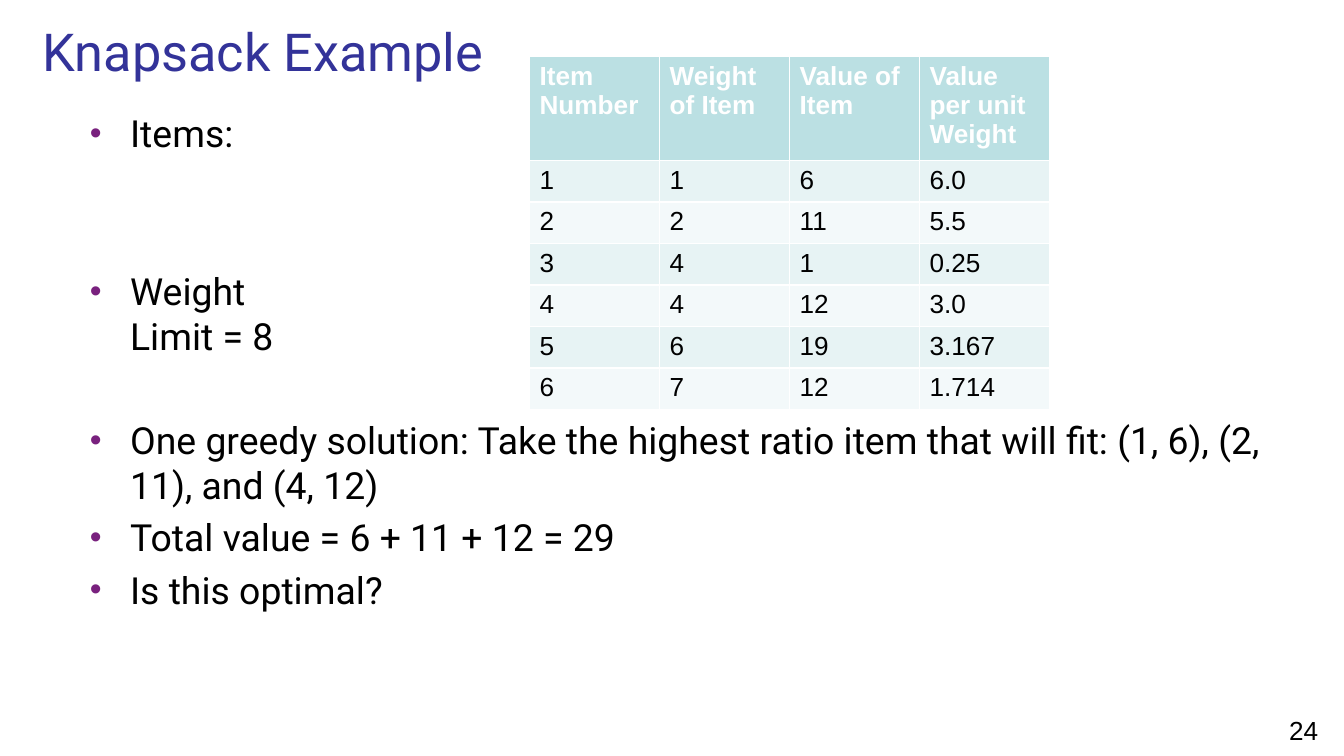
from dataclasses import dataclass

from lxml.etree import SubElement
from pptx import Presentation
from pptx.dml.color import RGBColor
from pptx.enum.text import MSO_ANCHOR, PP_ALIGN
from pptx.oxml.ns import qn
from pptx.util import Inches, Pt


@dataclass(frozen=True)
class Theme:
    heading_font: str = "Roboto"
    table_font: str = "Arial"
    title_size: float = 28
    body_size: float = 20
    small_size: float = 14
    title: str = "333399"
    text: str = "000000"
    bullet: str = "79217E"
    light: str = "FFFFFF"
    header: str = "BBE0E3"
    bands: tuple = ("E7F3F4", "F3F9FA")


@dataclass(frozen=True)
class Box:
    left: int
    top: int
    width: int
    height: int

    def bounds(self):
        return self.left, self.top, self.width, self.height


THEME = Theme()
SLIDE_WIDTH = Inches(10)
SLIDE_HEIGHT = SLIDE_WIDTH * 9 // 16
GRID_UNIT = SLIDE_WIDTH / 100
TIGHT, AFTER_ITEMS, AFTER_LIMIT = 4, 60.6, 32

POINTS = [
    ("Items:", TIGHT),
    ("Weight\nLimit = 8", AFTER_ITEMS),
    ("One greedy solution: Take the highest ratio item that will fit: "
     "(1, 6), (2, 11), and (4, 12)", AFTER_LIMIT),
    ("Total value = 6 + 11 + 12 = 29", TIGHT),
    ("Is this optimal?", TIGHT),
]
HEADINGS = ("Item Number", "Weight of Item", "Value of Item", "Value per unit Weight")
ITEMS = [
    ("1", "1", "6", "6.0"),
    ("2", "2", "11", "5.5"),
    ("3", "4", "1", "0.25"),
    ("4", "4", "12", "3.0"),
    ("5", "6", "19", "3.167"),
    ("6", "7", "12", "1.714"),
]


def grid_box(column, row, columns, rows):
    return Box(*(round(cells * GRID_UNIT) for cells in (column, row, columns, rows)))


def style(paragraph, font_name, size, color, bold=False):
    font = paragraph.font
    font.name, font.size, font.bold = font_name, Pt(size), bold
    font.color.rgb = RGBColor.from_string(color)


def add_frame(slide, box, anchor=MSO_ANCHOR.TOP):
    frame = slide.shapes.add_textbox(*box.bounds()).text_frame
    frame.word_wrap = True
    frame.vertical_anchor = anchor
    return frame


def add_bullet(paragraph):
    properties = paragraph._p.get_or_add_pPr()
    properties.set("marL", str(Inches(0.43)))
    properties.set("indent", str(Inches(-0.3)))
    color = SubElement(properties, qn("a:buClr"))
    SubElement(color, qn("a:srgbClr"), val=THEME.bullet)
    SubElement(properties, qn("a:buSzPct"), val="90000")
    SubElement(properties, qn("a:buFont"), typeface=THEME.table_font)
    SubElement(properties, qn("a:buChar"), char="•")


def title_region(slide, box):
    heading = add_frame(slide, box, MSO_ANCHOR.MIDDLE).paragraphs[0]
    heading.text = "Knapsack Example"
    style(heading, THEME.heading_font, THEME.title_size, THEME.title)


def points_region(slide, box):
    frame = add_frame(slide, box)
    for index, (wording, gap) in enumerate(POINTS):
        point = frame.add_paragraph() if index else frame.paragraphs[0]
        point.text = wording
        add_bullet(point)
        point.space_before = Pt(gap)
        style(point, THEME.heading_font, THEME.body_size, THEME.text)


def fill_cell(cell, wording, row):
    is_header = row == 0
    cell.margin_left = cell.margin_right = Pt(5.4)
    cell.margin_top = cell.margin_bottom = Pt(2.7)
    cell.fill.solid()
    background = THEME.header if is_header else THEME.bands[(row - 1) % 2]
    cell.fill.fore_color.rgb = RGBColor.from_string(background)
    label = cell.text_frame.paragraphs[0]
    label.text = wording
    label.alignment = PP_ALIGN.LEFT
    style(label, THEME.table_font, THEME.small_size,
          THEME.light if is_header else THEME.text, is_header)


def items_region(slide, box):
    rows = [HEADINGS, *ITEMS]
    items = slide.shapes.add_table(len(rows), len(HEADINGS), *box.bounds()).table
    for column in items.columns:
        column.width = box.width // len(HEADINGS)
    header_height = round(box.height * 0.29)
    for index, values in enumerate(rows):
        items.rows[index].height = (
            (box.height - header_height) // len(ITEMS) if index else header_height)
        for column, wording in enumerate(values):
            fill_cell(items.cell(index, column), wording, index)


def page_number_region(slide, box):
    number = add_frame(slide, box).paragraphs[0]
    number.text = "24"
    number.alignment = PP_ALIGN.CENTER
    style(number, THEME.table_font, THEME.small_size, THEME.text)


def main():
    presentation = Presentation()
    presentation.slide_width, presentation.slide_height = SLIDE_WIDTH, SLIDE_HEIGHT
    slide = presentation.slides.add_slide(presentation.slide_layouts[6])
    page_number_region(slide, grid_box(94, 52.7, 6, 3))
    title_region(slide, grid_box(2.2, 0.8, 97.4, 5.9))
    points_region(slide, grid_box(4.4, 7.7, 91.6, 43.8))
    items_region(slide, grid_box(39.4, 4.2, 38.7, 25.4))
    presentation.save("out.pptx")


if __name__ == "__main__":
    main()
